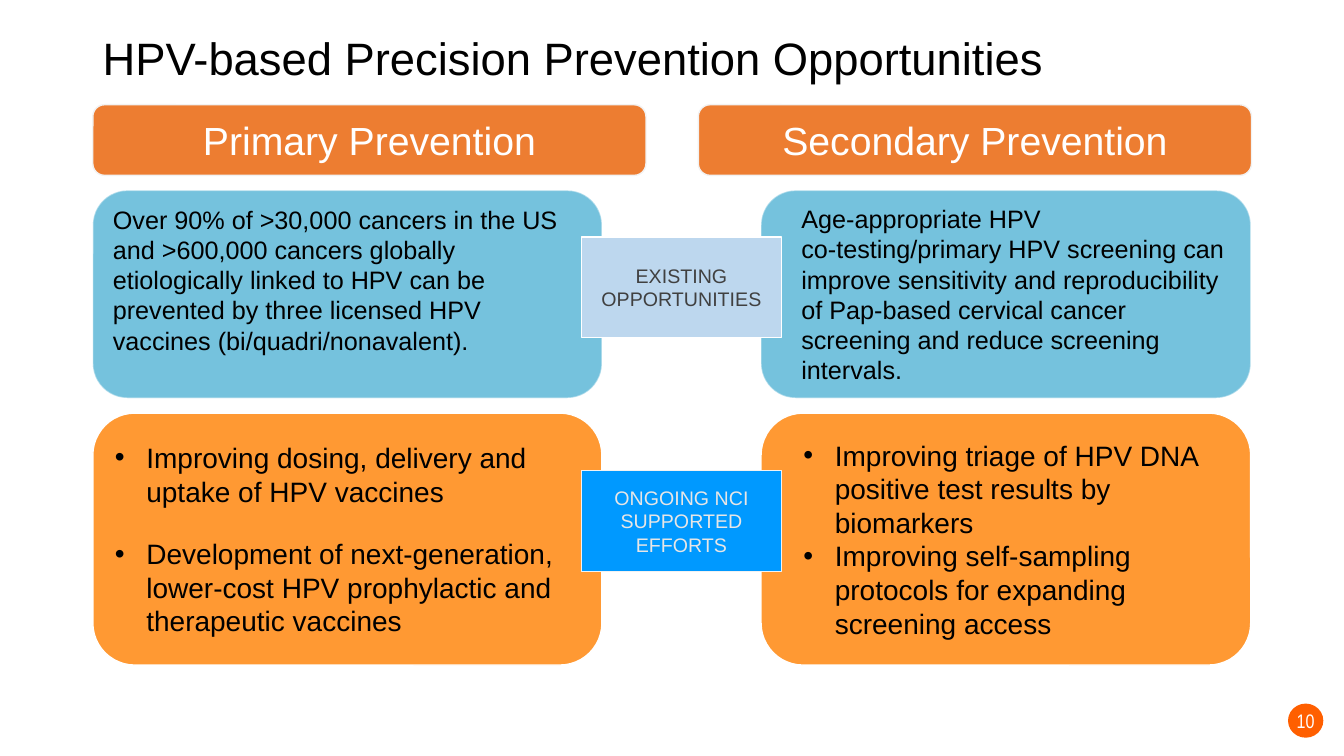
import dataclasses

import lxml.etree
import pptx
import pptx.dml.color
import pptx.enum.shapes
import pptx.enum.text
import pptx.oxml.ns
import pptx.util

Cm = pptx.util.Cm
Pt = pptx.util.Pt
RGBColor = pptx.dml.color.RGBColor
Kind = pptx.enum.shapes.MSO_SHAPE
Align = pptx.enum.text.PP_ALIGN
qn = pptx.oxml.ns.qn

BLACK = RGBColor(0, 0, 0)
WHITE = RGBColor(255, 255, 255)
PALE = RGBColor(0xF2, 0xF2, 0xF2)
SILVER = RGBColor(0xE7, 0xE6, 0xE6)
GRAY = RGBColor(0x40, 0x40, 0x40)
RUST = RGBColor(0xED, 0x7D, 0x31)
ORANGE = RGBColor(0xFF, 0x99, 0x33)
AQUA = RGBColor(0x75, 0xC2, 0xDD)
MIST = RGBColor(0xBD, 0xD7, 0xEE)
AZURE = RGBColor(0x00, 0x99, 0xFF)
FLAME = RGBColor(0xFF, 0x5F, 0x00)


@dataclasses.dataclass
class Box:
    """A filled shape with text; lengths in cm, sizes in points."""
    left: float
    top: float
    width: float
    height: float
    fill: RGBColor
    lines: list[str]
    size: float
    color: RGBColor = BLACK
    edge: RGBColor | None = WHITE
    kind: Kind = Kind.ROUNDED_RECTANGLE
    align: Align = Align.LEFT
    font: str = "Arial"
    indent: float = 0
    hang: float = 0
    gap: float = 0
    foot: float = 0.13
    alpha: int = 100
    wrap: bool = True


def write(frame, lines: list[str], size: float, color: RGBColor, font: str,
          align: Align, indent: float = 0, hang: float = 0,
          gap: float = 0) -> None:
    """Fill a text frame; a hanging indent brings bullets with it."""
    frame.vertical_anchor = pptx.enum.text.MSO_ANCHOR.MIDDLE
    frame.text = "\n".join(lines)
    for num, para in enumerate(frame.paragraphs):
        para.alignment = align
        if num and gap:
            para.space_before = Pt(gap)
        props = para._p.get_or_add_pPr()
        if indent:
            props.set("marL", str(Cm(indent)))
            props.set("indent", str(-Cm(hang)))
        if hang:
            face = lxml.etree.SubElement(props, qn("a:buFont"))
            face.set("typeface", "Arial")
            mark = lxml.etree.SubElement(props, qn("a:buChar"))
            mark.set("char", "•")
        for run in para.runs:
            run.font.size = Pt(size)
            run.font.name = font
            run.font.color.rgb = color


def draw(slide, box: Box) -> None:
    """Add one box to the slide."""
    shape = slide.shapes.add_shape(box.kind, Cm(box.left), Cm(box.top),
                                   Cm(box.width), Cm(box.height))
    shape.shadow.inherit = False
    shape.fill.solid()
    shape.fill.fore_color.rgb = box.fill
    if box.edge is None:
        shape.line.fill.background()
    else:
        shape.line.color.rgb = box.edge
        shape.line.width = Pt(1)
    if box.alpha < 100:
        tint = shape.line._ln.find(".//" + qn("a:srgbClr"))
        lxml.etree.SubElement(tint, qn("a:alpha")).set("val", str(box.alpha * 1000))
    frame = shape.text_frame
    frame.word_wrap = box.wrap
    frame.margin_bottom = Cm(box.foot)
    write(frame, box.lines, box.size, box.color, box.font, box.align,
          box.indent, box.hang, box.gap)


def head(left: float, text: str) -> Box:
    """Column heading."""
    return Box(left, 2.64, 13.94, 1.78, RUST, [text], 28, WHITE, PALE,
               align=Align.CENTER)


def fact(left: float, width: float, text: str, **more) -> Box:
    """Card for an existing opportunity."""
    return Box(left, 4.8, width, 5.23, AQUA, [text], 18, alpha=40, **more)


def plan(left: float, width: float, lines: list[str], **more) -> Box:
    """Card for ongoing efforts."""
    return Box(left, 10.41, width, 6.35, ORANGE, lines, 20, hang=0.79, **more)


def tag(top: float, text: str, fill: RGBColor, color: RGBColor,
        edge: RGBColor) -> Box:
    """Row label between the columns."""
    return Box(14.66, top, 5.03, 2.54, fill, [text], 14, color, edge,
               Kind.RECTANGLE, Align.CENTER)


# Column edges and card widths
LEFT, RIGHT = 2.34, 19.18
WIDE, SLIM = 12.83, 12.34

BOXES = [
    # Page number
    Box(32.46, 17.73, 0.89, 0.86, FLAME, ["10"], 14, WHITE, None, Kind.OVAL,
        Align.CENTER, "Arial Narrow", wrap=False),
    # Headings
    head(LEFT, "Primary Prevention"),
    head(17.6, "Secondary Prevention"),
    # Existing opportunities
    fact(LEFT, WIDE,
         "Over 90% of >30,000 cancers in the US and >600,000 cancers globally "
         "etiologically linked to HPV can be prevented by three licensed HPV "
         "vaccines (bi/quadri/nonavalent).", foot=0.86),
    fact(RIGHT, SLIM,
         "Age-appropriate HPV co-testing/primary HPV screening can improve "
         "sensitivity and reproducibility of Pap-based cervical cancer "
         "screening and reduce screening intervals.", indent=0.51),
    tag(5.97, "EXISTING OPPORTUNITIES", MIST, GRAY, WHITE),
    # Ongoing efforts
    plan(LEFT, WIDE,
         ["Improving dosing, delivery and uptake of HPV vaccines",
          "Development of next-generation, lower-cost HPV prophylactic and "
          "therapeutic vaccines"], indent=0.79, gap=20.7),
    plan(RIGHT, SLIM,
         ["Improving triage of HPV DNA positive test results by biomarkers",
          "Improving self-sampling protocols for expanding screening access"],
         indent=1.3),
    tag(11.86, "ONGOING NCI SUPPORTED EFFORTS", AZURE, SILVER, PALE),
]


def main() -> None:
    deck = pptx.Presentation()
    deck.slide_width, deck.slide_height = Cm(33.87), Cm(19.05)
    slide = deck.slides.add_slide(deck.slide_layouts[6])

    # Title
    title = slide.shapes.add_textbox(Cm(LEFT), Cm(0.81), Cm(29.21), Cm(1.47))
    title.text_frame.word_wrap = True
    write(title.text_frame, ["HPV-based Precision Prevention Opportunities"],
          32.4, BLACK, "Arial", Align.LEFT)
    title.text_frame.paragraphs[0].line_spacing = 0.9

    for box in BOXES:
        draw(slide, box)
    deck.save("out.pptx")


if __name__ == "__main__":
    main()
